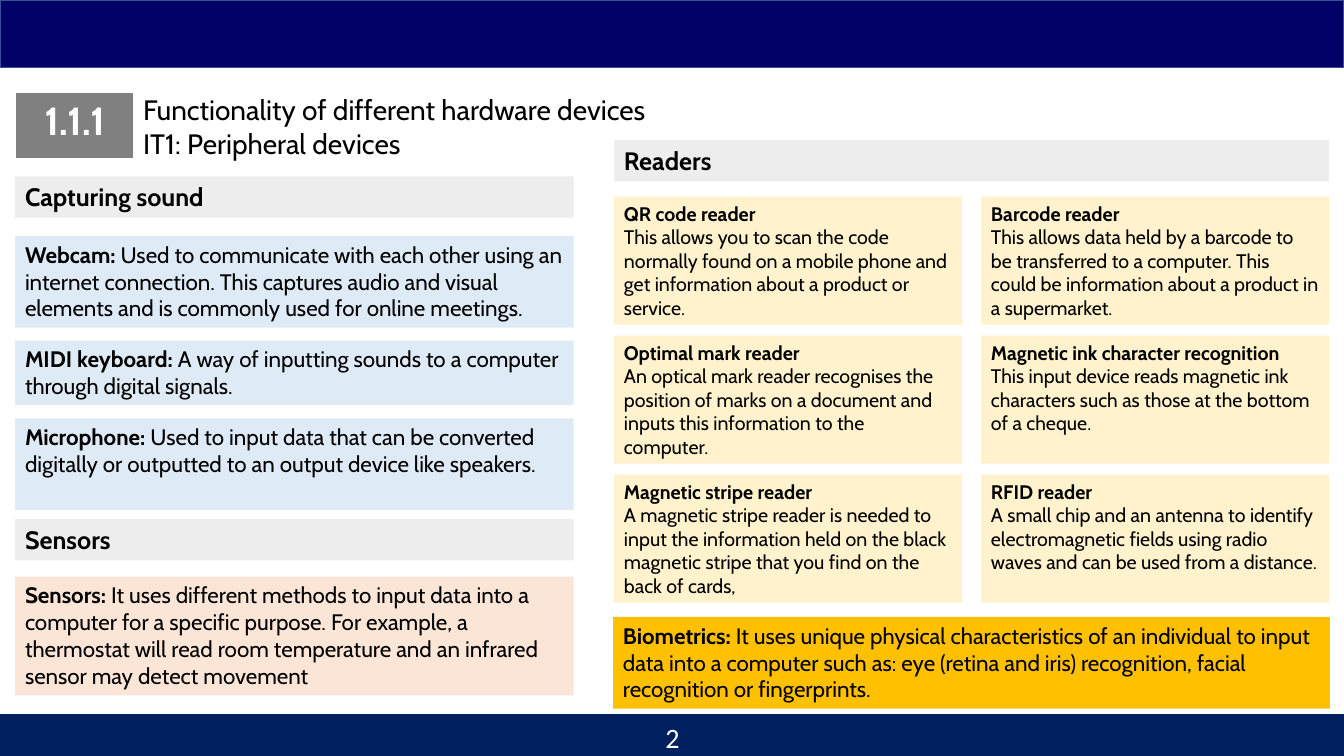
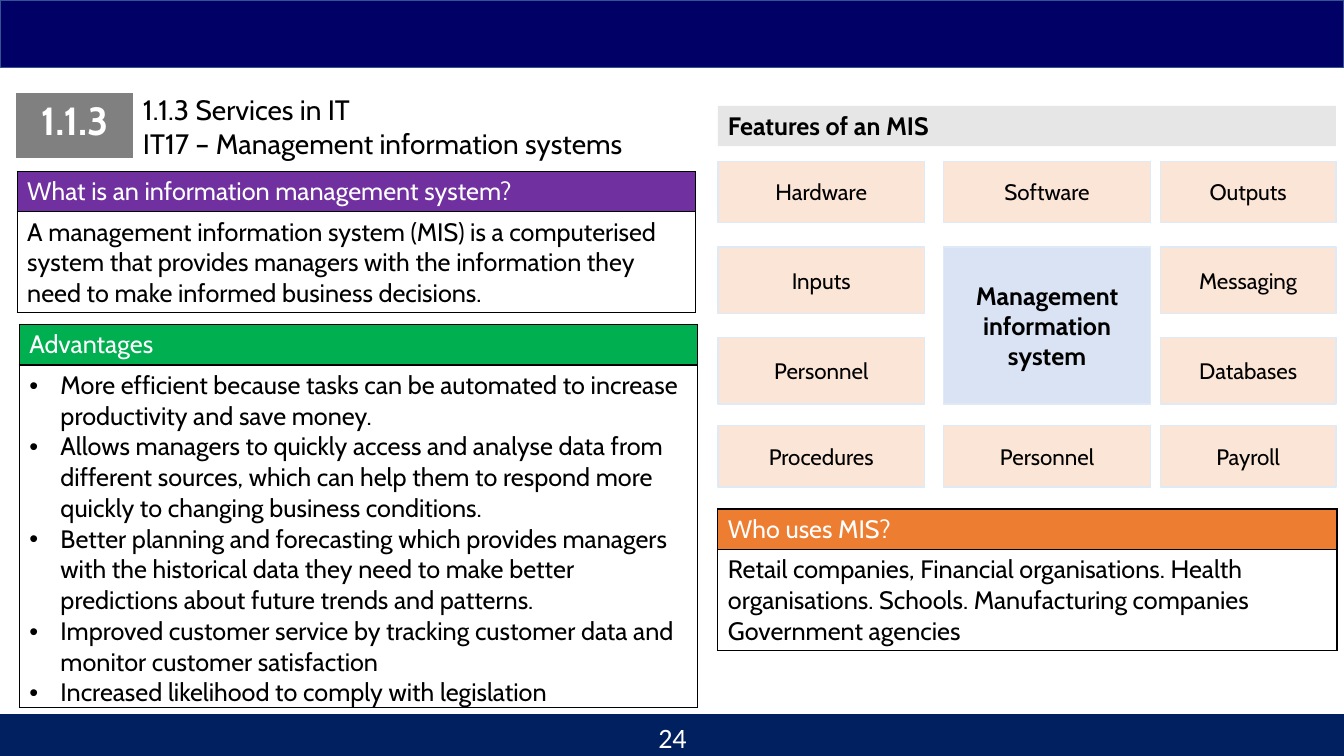
from lxml.etree import SubElement
from pptx import Presentation
from pptx.dml.color import RGBColor
from pptx.enum.shapes import MSO_SHAPE
from pptx.enum.text import MSO_ANCHOR, PP_ALIGN
from pptx.oxml.ns import qn
from pptx.util import Inches, Pt

THEME = {
    "font": "Cabin", "number font": "Calibri",
    "badge": 28, "title": 20, "head": 18, "body": 16, "small": 14,
    "black": "000000", "white": "FFFFFF", "gray": "808080",
    "band": "000066", "edge": "325491", "foot": "002060",
    "bar": "EDEDED", "dim": "E7E6E6", "sky": "DEEBF7", "peach": "FBE5D6",
    "cream": "FFF2CC", "gold": "FFC000", "core": "DAE3F3",
    "purple": "7030A0", "green": "00B050", "orange": "ED7D31",
}

DEVICES = {
    "code": "1.1.1", "number": "2", "width": 7.11,
    "title": ["Functionality of different hardware devices",
              "IT1: Peripheral devices"],
}
BARS = [
    ("Capturing sound", (0.15, 1.75, 5.54, 0.41)),
    ("Sensors", (0.15, 5.15, 5.54, 0.41)),
    ("Readers", (6.09, 1.39, 7.09, 0.41)),
]
NOTES = [
    ("Webcam:", " Used to communicate with each other using an internet connection. "
     "This captures audio and visual elements and is commonly used for online meetings.",
     (0.15, 2.34, 5.54, 0.91), "sky"),
    ("MIDI keyboard:", " A way of inputting sounds to a computer through digital signals.",
     (0.15, 3.38, 5.54, 0.64), "sky"),
    ("Microphone:", " Used to input data that can be converted digitally or outputted "
     "to an output device like speakers.",
     (0.15, 4.15, 5.54, 0.91), "sky"),
    ("Sensors:", " It uses different methods to input data into a computer for a specific "
     "purpose. For example, a thermostat will read room temperature and an infrared "
     "sensor may detect movement",
     (0.15, 5.72, 5.54, 1.18), "peach"),
    ("Biometrics:", " It uses unique physical characteristics of an individual to input "
     "data into a computer such as: eye (retina and iris) recognition, facial "
     "recognition or fingerprints.",
     (6.08, 6.12, 7.11, 0.91), "gold"),
]
READERS = [
    ("QR code reader", "This allows you to scan the code normally found on a mobile "
     "phone and get information about a product or service."),
    ("Barcode reader", "This allows data held by a barcode to be transferred to a "
     "computer. This could be information about a product in a supermarket."),
    ("Optimal mark reader", "An optical mark reader recognises the position of marks "
     "on a document and inputs this information to the computer."),
    ("Magnetic ink character recognition", "This input device reads magnetic ink "
     "characters such as those at the bottom of a cheque."),
    ("Magnetic stripe reader", "A magnetic stripe reader is needed to input the "
     "information held on the black magnetic stripe that you find on the back of cards,"),
    ("RFID reader", "A small chip and an antenna to identify electromagnetic fields "
     "using radio waves and can be used from a distance."),
]

SYSTEMS = {
    "code": "1.1.3", "number": "24", "width": 6.03,
    "title": ["1.1.3 Services in IT", "IT17 – Management information systems"],
}
PANELS = [
    ("What is an information management system?", "purple", (0.17, 1.7, 6.73, 1.4), False,
     ["A management information system (MIS) is a computerised system that provides "
      "managers with the information they need to make informed business decisions."]),
    ("Advantages", "green", (0.19, 3.22, 6.73, 3.8), True,
     ["More efficient because tasks can be automated to increase productivity and save money.",
      "Allows managers to quickly access and analyse data from different sources, which "
      "can help them to respond more quickly to changing business conditions.",
      "Better planning and forecasting which provides managers with the historical data "
      "they need to make better predictions about future trends and patterns.",
      "Improved customer service by tracking customer data and monitor customer satisfaction",
      "Increased likelihood to comply with legislation"]),
    ("Who uses MIS?", "orange", (7.12, 5.05, 6.14, 1.4), False,
     ["Retail companies, Financial organisations. Health organisations. Schools. "
      "Manufacturing companies", "Government agencies"]),
]
FEATURES = [
    ["Hardware", "Software", "Outputs"],
    ["Inputs", None, "Messaging"],
    ["Personnel", None, "Databases"],
    ["Procedures", "Personnel", "Payroll"],
]
COLS = [(7.12, 2.05), (9.36, 2.05), (11.51, 1.74)]
ROWS = [(1.6, 0.61), (2.45, 0.66), (3.35, 0.66), (4.22, 0.61)]


def tint(name):
    return RGBColor.from_string(THEME[name])


def paint(item, name):
    item.fill.solid()
    item.fill.fore_color.rgb = tint(name)


def write(frame, lines, size, color="black", align=PP_ALIGN.LEFT, font="font", dots=False):
    frame.word_wrap = True
    for i, line in enumerate(lines):
        para = frame.add_paragraph() if i else frame.paragraphs[0]
        para.alignment = align
        if dots:
            props = para._p.get_or_add_pPr()
            props.set("marL", str(Inches(0.31)))
            props.set("indent", str(Inches(-0.31)))
            SubElement(props, qn("a:buFont"), typeface="Arial")
            SubElement(props, qn("a:buChar"), char="•")
        for text, bold in line:
            run = para.add_run()
            run.text = text
            run.font.name = THEME[font]
            run.font.size = Pt(THEME[size])
            run.font.bold = bold
            run.font.color.rgb = tint(color)


def plain(texts):
    return [[(text, False)] for text in texts]


def box(slide, place, fill, line=None):
    shape = slide.shapes.add_shape(MSO_SHAPE.RECTANGLE, *map(Inches, place))
    shape.shadow.inherit = False
    paint(shape, fill)
    if line:
        shape.line.color.rgb = tint(line)
        shape.line.width = Pt(1)
    else:
        shape.line.fill.background()
    shape.text_frame.vertical_anchor = MSO_ANCHOR.MIDDLE if line else MSO_ANCHOR.TOP
    return shape


def label(slide, place, lines, **style):
    area = slide.shapes.add_textbox(*map(Inches, place))
    write(area.text_frame, lines, "title", **style)


def grid(slide, place, fills, edge, base=1):
    left, top, width, height = place
    count = len(fills[0])
    table = slide.shapes.add_table(len(fills), count, *map(Inches, place)).table
    table.first_row = table.horz_banding = False
    for col in table.columns:
        col.width = Inches(width / count)
    if len(fills) > 1:
        table.rows[0].height = Inches(0.4)
        table.rows[1].height = Inches(height - 0.4)
    for r, row in enumerate(fills):
        for c, fill in enumerate(row):
            cell = table.cell(r, c)
            props = cell._tc.get_or_add_tcPr()
            for side in "LRTB":
                points = base if side == "B" else 1
                line = SubElement(props, qn("a:ln" + side), w=str(Pt(points)))
                solid = SubElement(line, qn("a:solidFill"))
                SubElement(solid, qn("a:srgbClr"), val=THEME[edge])
            if fill:
                paint(cell, fill)
            else:
                cell.fill.background()
    return table


def start(deck, page):
    slide = deck.slides.add_slide(deck.slide_layouts[6])
    box(slide, (0, 0, 13.33, 0.67), "band", "edge")
    grid(slide, (0, 7.09, 13.33, 0.41), [["foot"] * 3], "foot")
    label(slide, (1.32, 0.87, page["width"], 0.77), plain(page["title"]))
    badge = grid(slide, (0.15, 0.92, 1.18, 0.67), [["gray"]], "white", 3)
    write(badge.cell(0, 0).text_frame, [[(page["code"], True)]], "badge",
          "white", PP_ALIGN.CENTER)
    label(slide, (5.17, 7.1, 3, 0.4), plain([page["number"]]), color="white",
          align=PP_ALIGN.CENTER, font="number font")
    return slide


def devices(deck):
    slide = start(deck, DEVICES)
    for text, place in BARS:
        write(box(slide, place, "bar").text_frame, [[(text, True)]], "head")
    for name, text, place, fill in NOTES:
        write(box(slide, place, fill).text_frame, [[(name, True), (text, False)]], "body")
    for i, (name, text) in enumerate(READERS):
        row, col = divmod(i, 2)
        place = (6.09 + 3.64 * col, 1.95 + 1.38 * row, 3.45, 1.27)
        write(box(slide, place, "cream").text_frame,
              [[(name, True)], [(text, False)]], "small")


def systems(deck):
    slide = start(deck, SYSTEMS)
    for head, fill, place, dots, texts in PANELS:
        table = grid(slide, place, [[fill], [None]], "black")
        write(table.cell(0, 0).text_frame, plain([head]), "head", "white")
        write(table.cell(1, 0).text_frame, plain(texts), "head", dots=dots)
    bar = box(slide, (7.12, 1.05, 6.13, 0.4), "dim")
    write(bar.text_frame, [[("Features of an MIS", True)]], "head")
    for names, (top, height) in zip(FEATURES, ROWS):
        for name, (left, width) in zip(names, COLS):
            if name:
                tile = box(slide, (left, top, width, height), "peach", "sky")
                write(tile.text_frame, plain([name]), "body", align=PP_ALIGN.CENTER)
    left, width = COLS[1]
    top, end = ROWS[1][0], sum(ROWS[2])
    core = box(slide, (left, top, width, end - top), "core", "sky")
    write(core.text_frame, [[("Management information system", True)]], "head",
          align=PP_ALIGN.CENTER)


def main():
    deck = Presentation()
    deck.slide_width, deck.slide_height = Inches(13.33), Inches(7.5)
    devices(deck)
    systems(deck)
    deck.save("out.pptx")


if __name__ == "__main__":
    main()
